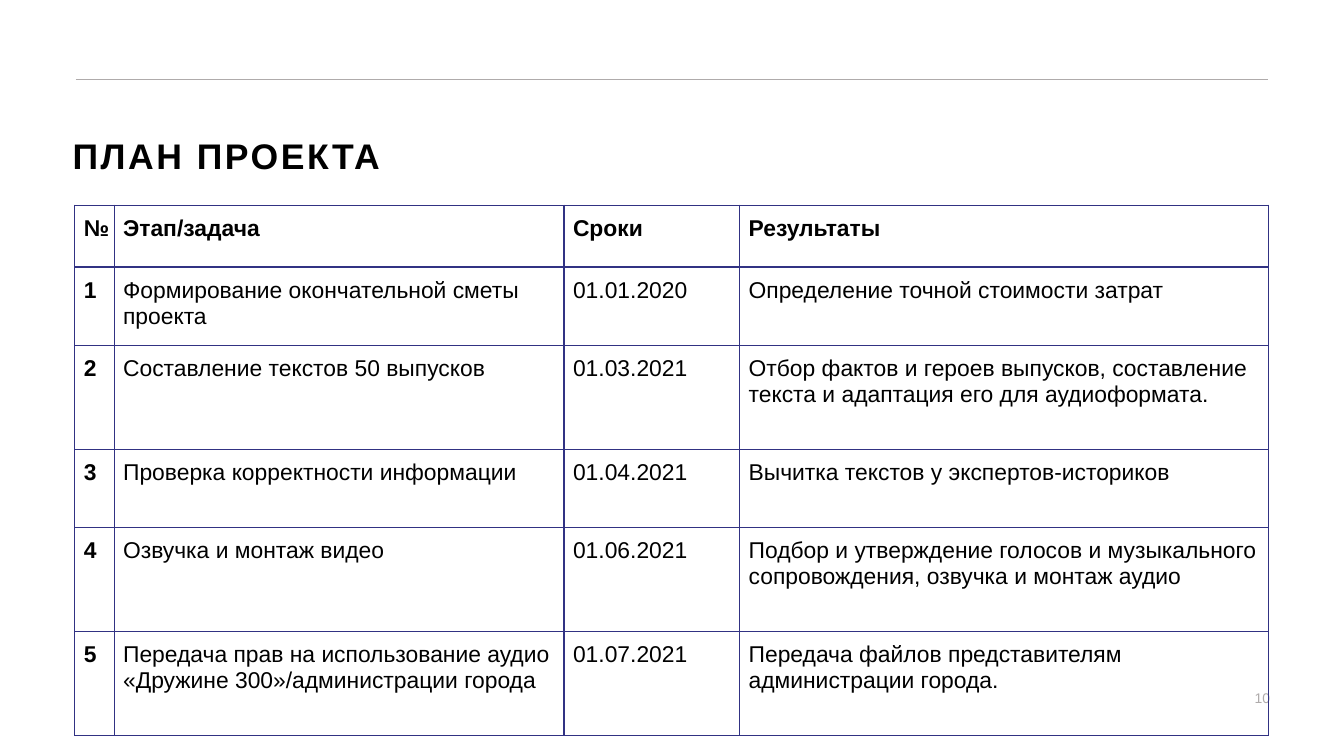
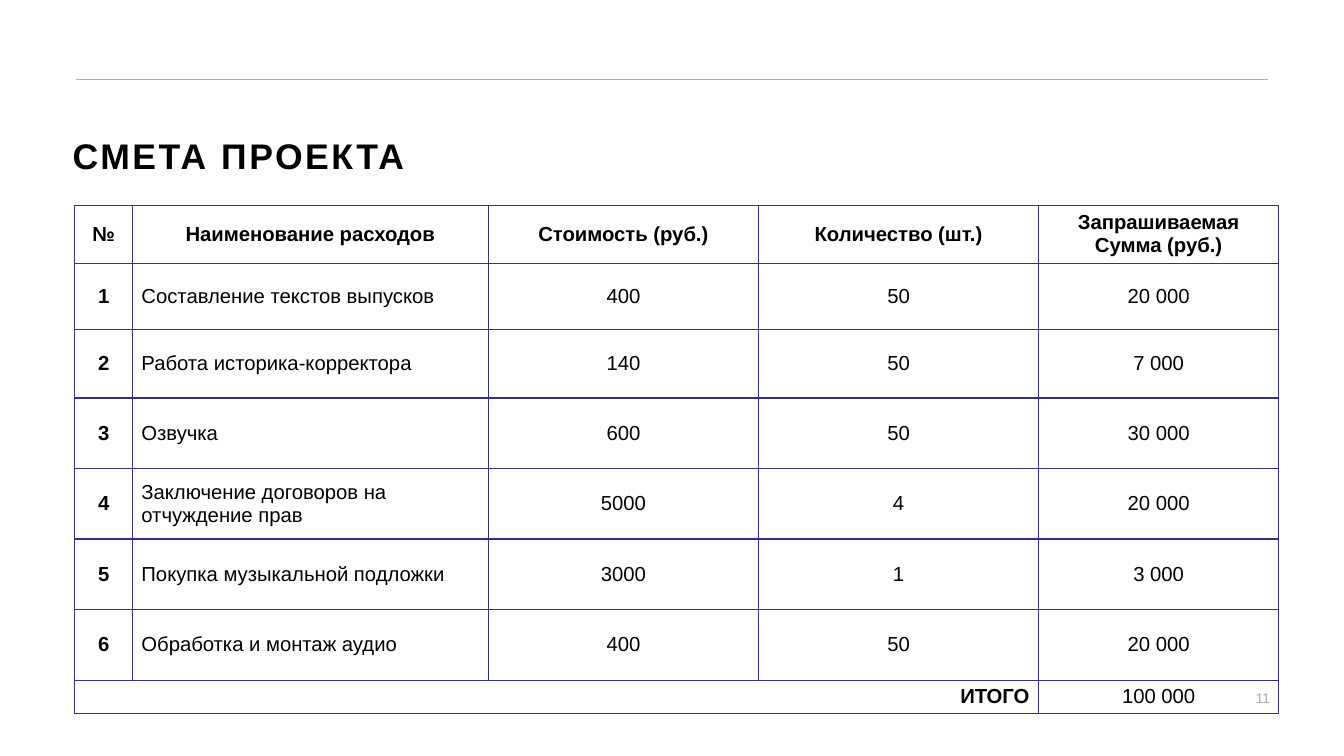
from lxml.etree import SubElement
from pptx import Presentation
from pptx.dml.color import RGBColor
from pptx.enum.shapes import MSO_CONNECTOR
from pptx.enum.text import MSO_ANCHOR, MSO_AUTO_SIZE, PP_ALIGN
from pptx.oxml.ns import qn
from pptx.util import Cm, Pt

FONT = "Arial"
BLACK, GREY, BORDER = "000000", "AFABAB", "313283"
LEFT, CENTER, RIGHT = PP_ALIGN.LEFT, PP_ALIGN.CENTER, PP_ALIGN.RIGHT
TITLE_BOX = (2.02, 3.71, 24.59, 1.19)
NUMBER_BOX = (27.13, 19.08, 8.41, 0.64)
RULE_LEFT, RULE_RIGHT, RULE_TOP = 2.11, 35.23, 2.21
TABLE_LEFT, TABLE_TOP = 2.08, 5.7

PLAN = [
    ("№", "Этап/задача", "Сроки", "Результаты"),
    ("1", "Формирование окончательной сметы проекта", "01.01.2020",
     "Определение точной стоимости затрат"),
    ("2", "Составление текстов 50 выпусков", "01.03.2021",
     "Отбор фактов и героев выпусков, составление текста и адаптация его для аудиоформата."),
    ("3", "Проверка корректности информации", "01.04.2021",
     "Вычитка текстов у экспертов-историков"),
    ("4", "Озвучка и монтаж видео", "01.06.2021",
     "Подбор и утверждение голосов и музыкального сопровождения, озвучка и монтаж аудио"),
    ("5", "Передача прав на использование аудио «Дружине 300»/администрации города",
     "01.07.2021", "Передача файлов представителям администрации города."),
]
BUDGET = [
    ("№", "Наименование расходов", "Стоимость (руб.)", "Количество (шт.)",
     "Запрашиваемая Сумма (руб.)"),
    ("1", "Составление текстов выпусков", "400", "50", "20 000"),
    ("2", "Работа историка-корректора", "140", "50", "7 000"),
    ("3", "Озвучка", "600", "50", "30 000"),
    ("4", "Заключение договоров на отчуждение прав", "5000", "4", "20 000"),
    ("5", "Покупка музыкальной подложки", "3000", "1", "3 000"),
    ("6", "Обработка и монтаж аудио", "400", "50", "20 000"),
    ("ИТОГО", "", "", "", "100 000"),
]


def rgb(value):
    return RGBColor.from_string(value)


def style(p, size, color=BLACK, bold=False, align=LEFT):
    p.alignment = align
    p.font.name, p.font.size, p.font.bold = FONT, Pt(size), bold
    p.font.color.rgb = rgb(color)


def add_frame(s, title, number):
    """Add the title, the rule above it and the page number."""
    sp = s.shapes.title
    sp.left, sp.top, sp.width, sp.height = map(Cm, TITLE_BOX)
    tf = sp.text_frame
    tf.margin_left = tf.margin_top = tf.margin_right = tf.margin_bottom = 0
    tf.vertical_anchor = MSO_ANCHOR.MIDDLE
    tf.auto_size = MSO_AUTO_SIZE.SHAPE_TO_FIT_TEXT
    p = tf.paragraphs[0]
    r = p.add_run()
    r.text = title
    style(p, 28, bold=True)
    r.font._element.set("spc", "200")

    rule = s.shapes.add_connector(MSO_CONNECTOR.STRAIGHT, Cm(RULE_LEFT), Cm(RULE_TOP),
                                  Cm(RULE_RIGHT), Cm(RULE_TOP))
    rule.line.color.rgb = rgb(GREY)
    rule.line.width = Pt(0.5)
    SubElement(rule._element.spPr, qn("a:effectLst"))

    tf = s.shapes.add_textbox(*map(Cm, NUMBER_BOX)).text_frame
    tf.word_wrap = True
    tf.vertical_anchor = MSO_ANCHOR.MIDDLE
    tf.text = str(number)
    style(tf.paragraphs[0], 11, GREY, align=RIGHT)


def add_borders(cell):
    tcPr = cell._tc.get_or_add_tcPr()
    for side in ("lnL", "lnR", "lnT", "lnB"):
        ln = SubElement(tcPr, qn(f"a:{side}"), w=str(Pt(1)))
        fill = SubElement(ln, qn("a:solidFill"))
        SubElement(fill, qn("a:srgbClr"), val=BORDER)


def add_grid(s, left, top, cols, heights, rows, size, aligns, head_aligns, pad, anchor):
    """Add a ruled table with a bold first row and column; lengths in cm."""
    table = s.shapes.add_table(len(rows), len(cols), Cm(left), Cm(top),
                               Cm(sum(cols)), Cm(sum(heights))).table
    table.first_row = table.horz_banding = False
    for column, width in zip(table.columns, cols):
        column.width = Cm(width)
    for i, (row, height) in enumerate(zip(rows, heights)):
        table.rows[i].height = Cm(height)
        for j, text in enumerate(row):
            cell = table.cell(i, j)
            add_borders(cell)
            cell.fill.background()
            cell.margin_left = cell.margin_right = Cm(0.25)
            cell.margin_top = cell.margin_bottom = Cm(pad)
            cell.vertical_anchor = anchor
            cell.text = text
            align = (aligns if i else head_aligns)[j]
            style(cell.text_frame.paragraphs[0], size, bold=i == 0 or j == 0, align=align)
    return table


def add_plan(s):
    add_grid(s, TABLE_LEFT, TABLE_TOP, [1.09, 12.5, 4.88, 14.7],
             [1.72, 2.17, 2.89, 2.17, 2.89, 2.89], PLAN, 18,
             [LEFT] * 4, [CENTER] + [LEFT] * 3, 0.3, MSO_ANCHOR.TOP)


def add_budget(s):
    table = add_grid(s, TABLE_LEFT, TABLE_TOP, [1.6, 9.88, 7.52, 7.77, 6.68],
                     [1.62, 1.83, 1.91] + [1.96] * 4 + [0.91], BUDGET, 16,
                     [CENTER, LEFT] + [CENTER] * 3, [CENTER] * 5, 0.13, MSO_ANCHOR.MIDDLE)
    last = len(BUDGET) - 1
    total = table.cell(last, 0)
    total.merge(table.cell(last, 3))
    total.text_frame.paragraphs[0].alignment = RIGHT


def main():
    prs = Presentation()
    prs.slide_width, prs.slide_height = Cm(37.34), Cm(21.01)
    pages = [("ПЛАН ПРОЕКТА", add_plan), ("СМЕТА ПРОЕКТА", add_budget)]
    for number, (title, add_content) in enumerate(pages, start=10):
        s = prs.slides.add_slide(prs.slide_layouts.get_by_name("Title Only"))
        add_frame(s, title, number)
        add_content(s)
    prs.save("out.pptx")


if __name__ == "__main__":
    main()
